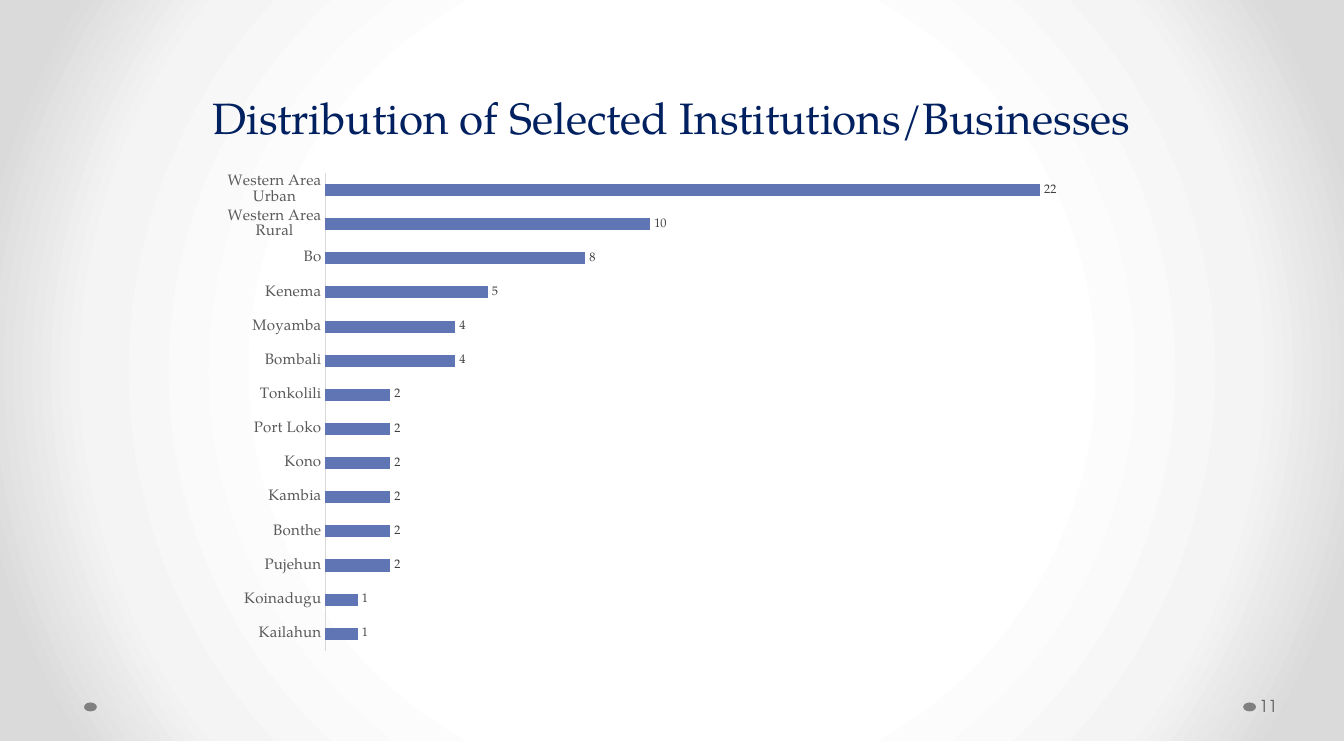
"""Build the slide on the distribution of selected institutions and businesses."""
import dataclasses

import pptx
import pptx.chart.data
import pptx.dml.color
import pptx.enum.chart
import pptx.enum.shapes
import pptx.enum.text
import pptx.oxml
import pptx.oxml.ns
import pptx.util
from pptx.util import Cm, Pt


@dataclasses.dataclass(frozen=True)
class Theme:
    serif: str = "TeX Gyre Pagella"
    sans: str = "TeX Gyre Adventor"
    title: str = "002060"
    muted: str = "595959"
    label: str = "404040"
    bar: str = "6076B4"
    axis: str = "D9D9D9"
    dot: str = "808080"
    text: str = "000000"
    backdrop: tuple = ((50, "FFFFFF"), (76, "F4F4F4"), (92, "DADADA"))
    title_size: int = 32
    number_size: int = 12
    chart_size: int = 10
    category_size: int = 11
    label_size: int = 9


theme = Theme()
rgb = pptx.dml.color.RGBColor.from_string
qn = pptx.oxml.ns.qn
ALIGN = pptx.enum.text.PP_ALIGN
ANCHOR = pptx.enum.text.MSO_ANCHOR


def set_font(font, name, size, color):
    font.name, font.size = name, Pt(size)
    font.color.rgb = rgb(color)


def add_text(s, text, *, box, name, size, color, align=ALIGN.LEFT,
             anchor=ANCHOR.MIDDLE, spacing=None, left_inset=0.25, right_inset=0.25):
    tf = s.shapes.add_textbox(*map(Cm, box)).text_frame
    tf.word_wrap = True
    tf.vertical_anchor = anchor
    tf.margin_left, tf.margin_right = Cm(left_inset), Cm(right_inset)
    p = tf.paragraphs[0]
    p.alignment = align
    p.line_spacing = spacing
    r = p.add_run()
    r.text = text
    set_font(r.font, name, size, color)


prs = pptx.Presentation()
prs.slide_width, prs.slide_height = Cm(34.54), Cm(19.05)
s = prs.slides.add_slide(prs.slide_layouts[6])

s.background.fill.gradient()
grad = s.element.find(".//" + qn("a:gradFill"))
stops = "".join(
    f'<a:gs pos="{pos * 1000}"><a:srgbClr val="{color}"/></a:gs>'
    for pos, color in theme.backdrop
)
radial = pptx.oxml.parse_xml(
    f'<a:gradFill {pptx.oxml.ns.nsdecls("a")} rotWithShape="1"><a:gsLst>{stops}</a:gsLst>'
    '<a:path path="circle"><a:fillToRect l="50000" t="50000" r="50000" b="50000"/></a:path>'
    "</a:gradFill>"
)
grad.getparent().replace(grad, radial)

for left in (31.95, 2.16):
    dot = s.shapes.add_shape(
        pptx.enum.shapes.MSO_SHAPE.OVAL, Cm(left), Cm(18.06), Cm(0.33), Cm(0.23))
    dot.shadow.inherit = False
    dot.fill.solid()
    dot.fill.fore_color.rgb = rgb(theme.dot)
    dot.line.fill.background()

add_text(s, "Distribution of Selected Institutions/Businesses", box=(2.03, 0, 30.48, 3.81),
         name=theme.serif, size=theme.title_size, color=theme.title,
         align=ALIGN.CENTER, anchor=ANCHOR.BOTTOM, spacing=Pt(58))
add_text(s, "11", box=(32.28, 17.65, 2.13, 1.02), name=theme.sans,
         size=theme.number_size, color=theme.muted, left_inset=0.08, right_inset=0.13)

districts = {
    "Kailahun": 1, "Koinadugu": 1, "Pujehun": 2, "Bonthe": 2, "Kambia": 2,
    "Kono": 2, "Port Loko": 2, "Tonkolili": 2, "Bombali": 4, "Moyamba": 4,
    "Kenema": 5, "Bo": 8, "Western Area Rural": 10, "Western Area Urban": 22,
}
data = pptx.chart.data.CategoryChartData()
data.categories = list(districts)
data.add_series("Series 1", list(districts.values()))
chart = s.shapes.add_chart(
    pptx.enum.chart.XL_CHART_TYPE.BAR_CLUSTERED,
    Cm(4.9), Cm(3.99), Cm(24.74), Cm(13.06), data).chart
chart.has_title = False
chart.has_legend = False
set_font(chart.font, theme.serif, theme.chart_size, theme.text)

cat_axis = chart.category_axis
cat_axis.major_tick_mark = pptx.enum.chart.XL_TICK_MARK.NONE
cat_axis.minor_tick_mark = pptx.enum.chart.XL_TICK_MARK.NONE
cat_axis.format.line.color.rgb = rgb(theme.axis)
cat_axis.format.line.width = Pt(0.75)
set_font(cat_axis.tick_labels.font, theme.serif, theme.category_size, theme.muted)

val_axis = chart.value_axis
val_axis.minimum_scale, val_axis.maximum_scale = 0, 25
val_axis.has_major_gridlines = False
val_axis.visible = False

plot = chart.plots[0]
plot.gap_width = 182
plot.vary_by_categories = False
series = plot.series[0]
series.format.fill.solid()
series.format.fill.fore_color.rgb = rgb(theme.bar)
labels = series.data_labels
labels.show_value = True
labels.position = pptx.enum.chart.XL_LABEL_POSITION.OUTSIDE_END
set_font(labels.font, theme.serif, theme.label_size, theme.label)

plot_area = chart.element.find(".//" + qn("c:plotArea"))
for layout in plot_area.findall(qn("c:layout")):
    plot_area.remove(layout)
frame = "".join(
    f'<c:{tag} val="{val}"/>' for tag, val in (
        ("layoutTarget", "inner"), ("xMode", "edge"), ("yMode", "edge"),
        ("x", 0.14), ("y", 0.035), ("w", 0.844), ("h", 0.941))
)
plot_area.insert(0, pptx.oxml.parse_xml(
    f'<c:layout {pptx.oxml.ns.nsdecls("c")}><c:manualLayout>{frame}</c:manualLayout></c:layout>'))

prs.save("out.pptx")
